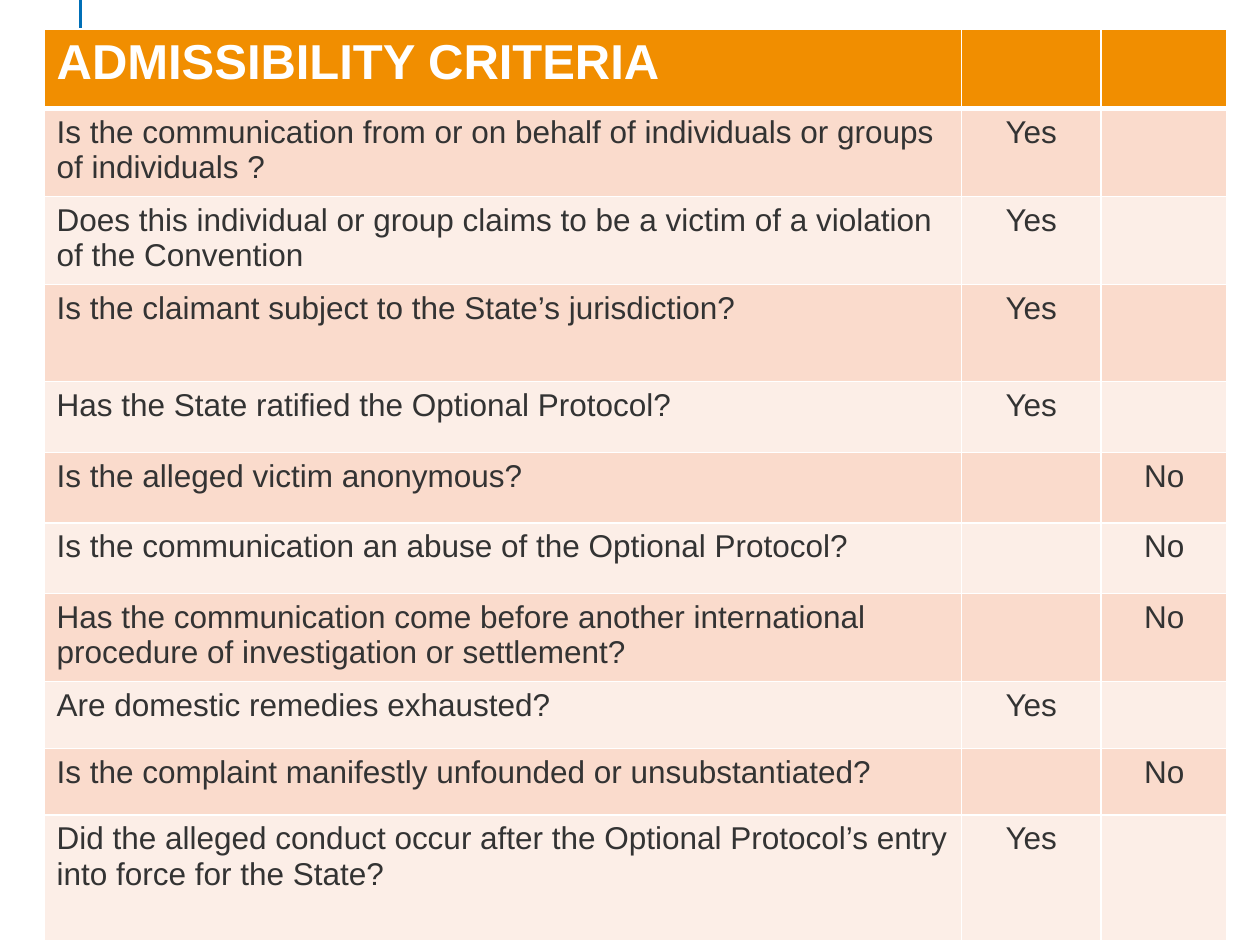
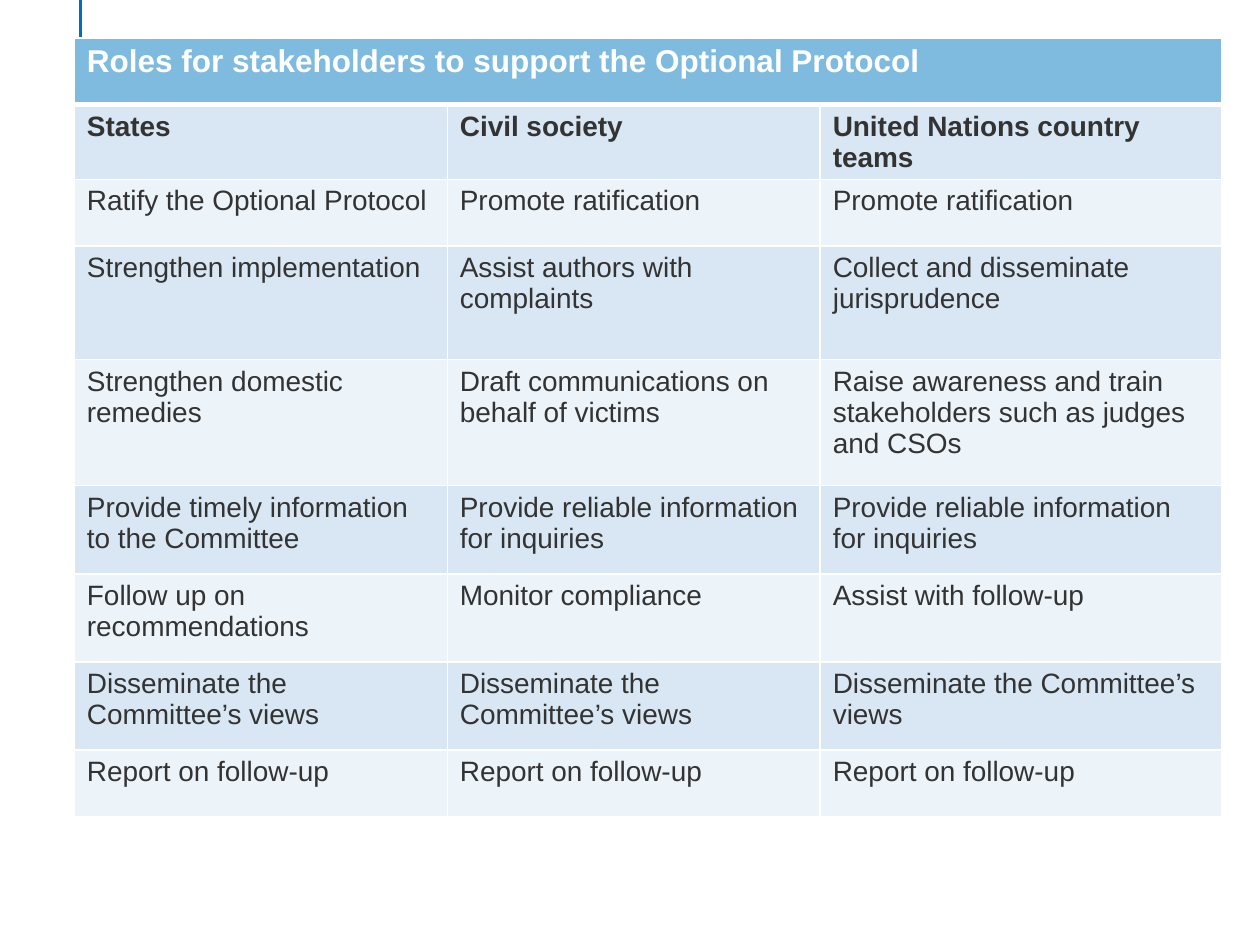
from lxml import etree
from pptx import Presentation
from pptx.dml.color import RGBColor
from pptx.enum.shapes import MSO_CONNECTOR
from pptx.enum.text import PP_ALIGN
from pptx.oxml.ns import qn
from pptx.util import Inches, Pt

STRAIGHT = MSO_CONNECTOR.STRAIGHT
LEFT, CENTER = PP_ALIGN.LEFT, PP_ALIGN.CENTER

WHITE = RGBColor(0xFF, 0xFF, 0xFF)
INK = RGBColor(0x33, 0x33, 0x33)
RULE_BLUE = RGBColor(0x00, 0x6F, 0xB7)
ORANGE = RGBColor(0xF1, 0x8E, 0x00)
PEACH = RGBColor(0xFA, 0xDB, 0xCC)
PALE_PEACH = RGBColor(0xFC, 0xEE, 0xE7)
SKY = RGBColor(0x7F, 0xBA, 0xDF)
MIST = RGBColor(0xD8, 0xE7, 0xF3)
PALE_MIST = RGBColor(0xEC, 0xF3, 0xF9)

# The slide is a grid of 100 columns by 75 rows
GRID_COLUMNS, GRID_ROWS = 100, 75

CRITERIA_TITLE = "ADMISSIBILITY CRITERIA"
CRITERIA = [
    ("Is the communication from or on behalf of individuals or groups of individuals ?", "Yes"),
    ("Does this individual or group claims to be a victim of a violation of the Convention", "Yes"),
    ("Is the claimant subject to the State’s jurisdiction?", "Yes"),
    ("Has the State ratified the Optional Protocol?", "Yes"),
    ("Is the alleged victim anonymous?", "No"),
    ("Is the communication an abuse of the Optional Protocol?", "No"),
    ("Has the communication come before another international procedure of "
     "investigation or settlement?", "No"),
    ("Are domestic remedies exhausted?", "Yes"),
    ("Is the complaint manifestly unfounded or unsubstantiated?", "No"),
    ("Did the alleged conduct occur after the Optional Protocol’s entry into force "
     "for the State?", "Yes"),
]

ROLES_TITLE = "Roles for stakeholders to support the Optional Protocol"
ROLES = [
    ("States", "Civil society", "United Nations country teams"),
    ("Ratify the Optional Protocol", "Promote ratification", "Promote ratification"),
    ("Strengthen implementation", "Assist authors with complaints",
     "Collect and disseminate jurisprudence"),
    ("Strengthen domestic remedies", "Draft communications on behalf of victims",
     "Raise awareness and train stakeholders such as judges and CSOs"),
    ("Provide timely information to the Committee",
     "Provide reliable information for inquiries",
     "Provide reliable information for inquiries"),
    ("Follow up on recommendations", "Monitor compliance", "Assist with follow-up"),
    ("Disseminate the Committee’s views",) * 3,
    ("Report on follow-up",) * 3,
]


class Deck:
    """Holds the shared style and the current slide."""

    font_name = "Arial"
    border, header_border = Pt(1), Pt(3)

    def __init__(self):
        self.prs = Presentation()
        self.prs.slide_width, self.prs.slide_height = Inches(10), Inches(7.5)
        self.slide = None

    def x(self, columns):
        return round(self.prs.slide_width * columns / GRID_COLUMNS)

    def y(self, rows):
        return round(self.prs.slide_height * rows / GRID_ROWS)

    def new_slide(self):
        self.slide = self.prs.slides.add_slide(self.prs.slide_layouts[6])
        self.line(6.4, 0, 6.4, 7.2, RULE_BLUE, 2)

    def line(self, x1, y1, x2, y2, color, width):
        rule = self.slide.shapes.add_connector(
            STRAIGHT, self.x(x1), self.y(y1), self.x(x2), self.y(y2))
        rule.line.color.rgb = color
        rule.line.width = Pt(width)
        etree.SubElement(rule._element.spPr, qn("a:effectLst"))

    def table(self, left, top, widths, heights, header_fill, bands):
        """Add an empty table with a filled header and two alternating bands."""
        table = self.slide.shapes.add_table(
            len(heights), len(widths), self.x(left), self.y(top),
            self.x(sum(widths)), self.y(sum(heights))).table
        table.horz_banding = False
        for column, width in zip(table.columns, widths):
            column.width = self.x(width)
        for index, (row, height) in enumerate(zip(table.rows, heights)):
            row.height = self.y(height)
            fill = bands[(index - 1) % 2] if index else header_fill
            for cell in row.cells:
                self.cell_borders(cell, index)
                cell.fill.solid()
                cell.fill.fore_color.rgb = fill
        return table

    def cell_borders(self, cell, row_index):
        widths = {"L": self.border, "R": self.border,
                  "T": self.header_border if row_index == 1 else self.border,
                  "B": self.header_border if row_index == 0 else self.border}
        properties = cell._tc.get_or_add_tcPr()
        for side, width in widths.items():
            edge = etree.SubElement(properties, qn(f"a:ln{side}"), w=str(width))
            solid = etree.SubElement(edge, qn("a:solidFill"))
            etree.SubElement(solid, qn("a:srgbClr"), val=str(WHITE))

    def cell_text(self, cell, text, size, color=INK, bold=False, align=LEFT):
        paragraph = cell.text_frame.paragraphs[0]
        paragraph.alignment = align
        run = paragraph.add_run()
        run.text = text
        run.font.color.rgb = color
        style = {"name": self.font_name, "size": Pt(size), "bold": bold}
        for attribute, value in style.items():
            setattr(run.font, attribute, value)


def add_criteria(deck):
    deck.new_slide()
    table = deck.table(
        3.5, 2.3, [72.8, 11.1, 10],
        [6.3, 7, 7, 7.7, 5.6, 5.6, 5.6, 7, 5.3, 5.3, 10],
        ORANGE, (PEACH, PALE_PEACH))
    deck.cell_text(table.cell(0, 0), CRITERIA_TITLE, 28, WHITE, True)
    answer_columns = {"Yes": 1, "No": 2}
    for row, (question, answer) in enumerate(CRITERIA, start=1):
        deck.cell_text(table.cell(row, 0), question, 18)
        deck.cell_text(table.cell(row, answer_columns[answer]), answer, 18, align=CENTER)


def add_roles(deck):
    deck.new_slide()
    table = deck.table(
        5.9, 3, [29.6, 29.6, 31.9],
        [5.3, 5.3, 5.3, 9, 10, 7, 7, 7, 5.3],
        SKY, (MIST, PALE_MIST))
    table.cell(0, 0).merge(table.cell(0, 2))
    deck.cell_text(table.cell(0, 0), ROLES_TITLE, 18, WHITE, True)
    for row, roles in enumerate(ROLES, start=1):
        for column, role in enumerate(roles):
            deck.cell_text(table.cell(row, column), role, 16, bold=row == 1)


def main():
    deck = Deck()
    add_criteria(deck)
    add_roles(deck)
    deck.prs.save("out.pptx")


if __name__ == "__main__":
    main()
